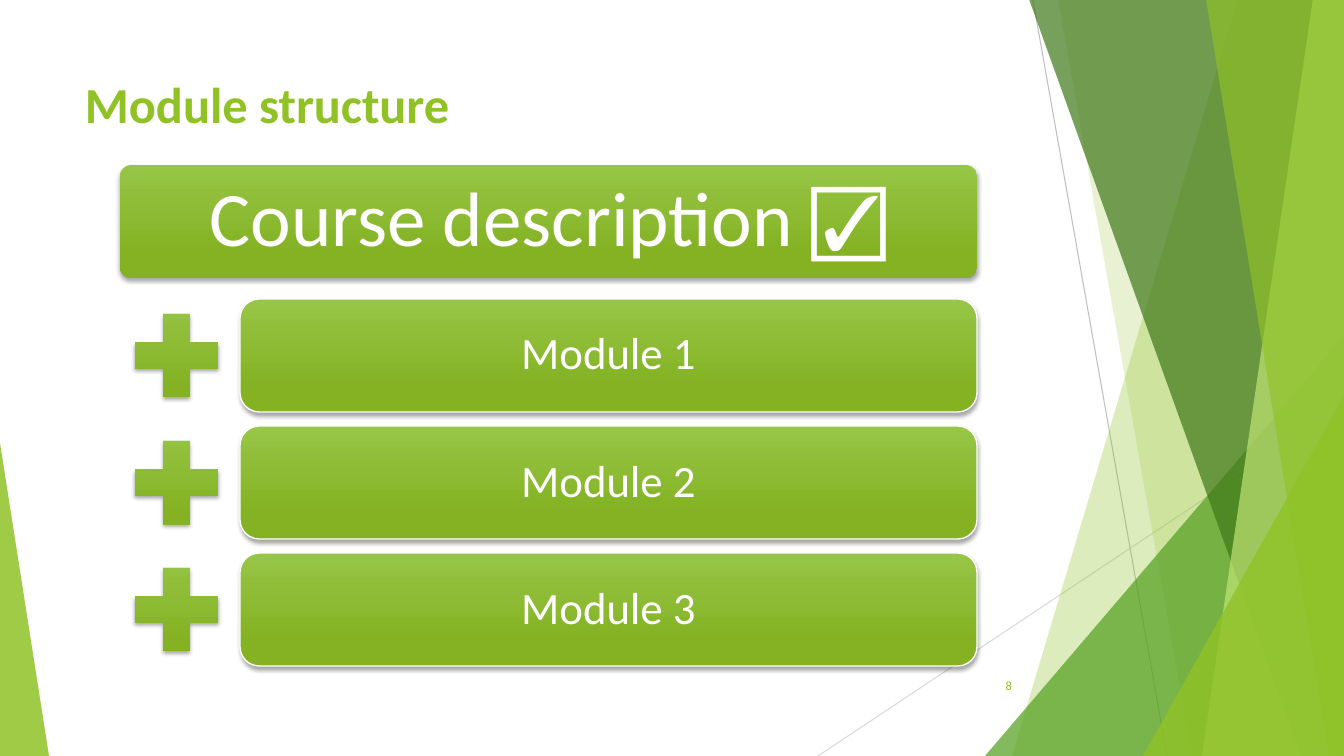
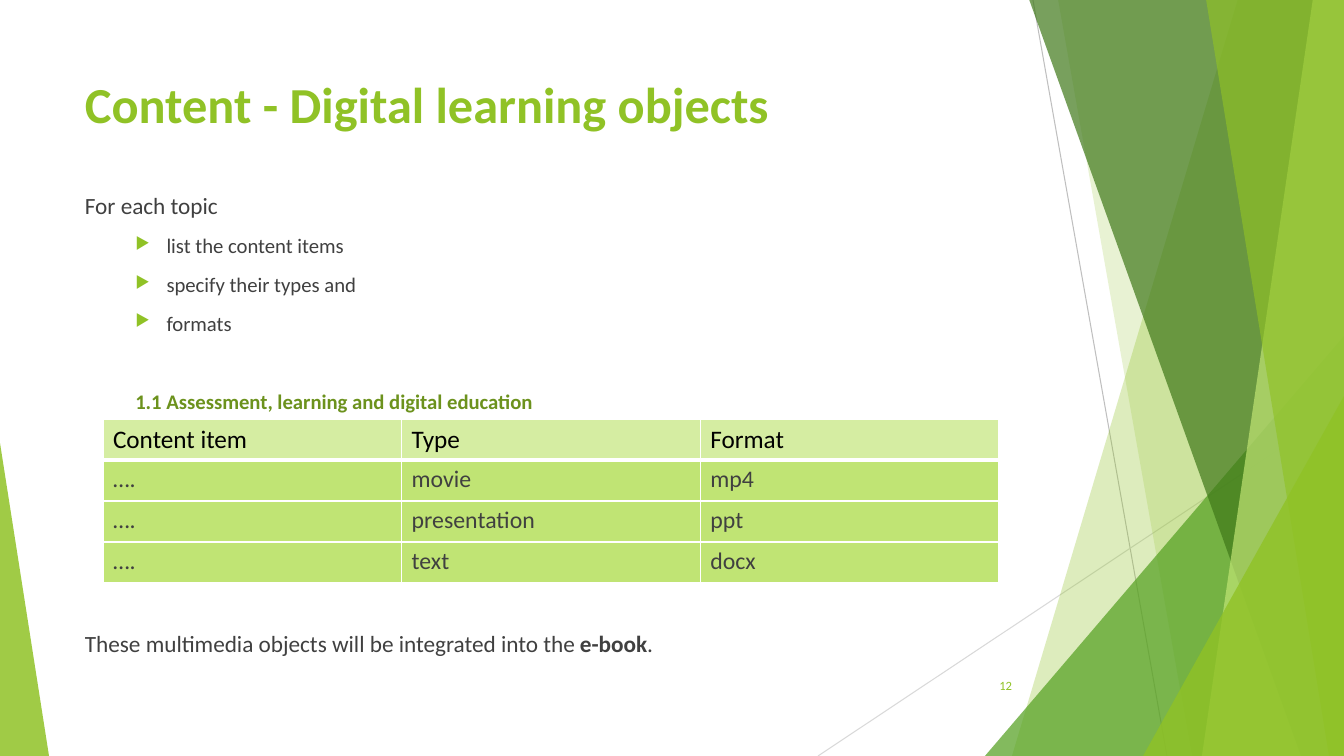
"""Builds two course-template slides on a shared green backdrop."""
from lxml import etree
from pptx import Presentation
from pptx import util as u
from pptx.dml.color import RGBColor
from pptx.enum import shapes, text
from pptx.oxml.ns import qn

PX = 914400 / 100.8
WIDE, HIGH = 1344, 756
FONT = "Calibri"
GREEN, DARK, WHITE = "90C226", "404040", "FFFFFF"
KIND = shapes.MSO_SHAPE
ALIGN = text.PP_ALIGN
MID = text.MSO_ANCHOR.MIDDLE

LINES = [((1033, 0, 1167, 756), "BFBFBF"), ((1344, 406, 818, 756), "D9D9D9")]
DECOR = [
    ("band", (1238, 1012), GREEN, 30),
    ("band", (1058, 1192), GREEN, 20),
    ("wedge", (985, 336, 359, 420, 1), "54A021", 72),
    ("band", (1029, 1301), "3F7819", 70),
    ("band", (1313, 1202), "C0E474", 70),
    ("band", (1206, 1329), GREEN, 65),
    ("wedge", (1143, 396, 201, 360, 1), GREEN, 80),
    ("wedge", (0, 443, 49, 313, 0), GREEN, 85),
]

COURSE = "Course description ☑"
MODULES = ["Module 1", "Module 2", "Module 3"]
INTRO = "For each topic"
STEPS = ["list the content items", "specify their types and", "formats"]
TOPIC = "1.1 Assessment, learning and digital education"
CLOSING = [("These multimedia objects will be integrated into the ", False),
           ("e-book", True), (".", False)]
ITEMS = [
    ("Content item", "Type", "Format"),
    ("….", "movie", "mp4"),
    ("….", "presentation", "ppt"),
    ("….", "text", "docx"),
]


def emu(*vals):
    return [u.Emu(round(v * PX)) for v in vals]


def rgb(code):
    return RGBColor.from_string(code)


def sub(node, tag, **attrs):
    return etree.SubElement(node, qn(tag), {k: str(v) for k, v in attrs.items()})


def style(para, size, color, bold=False, align=ALIGN.LEFT):
    font = para.font
    font.name, font.size, font.bold = FONT, u.Pt(size), bold
    font.color.rgb = rgb(color)
    para.alignment = align


def tint(shape, color, alpha):
    shape.shadow.inherit = False
    shape.line.fill.background()
    shape.fill.solid()
    shape.fill.fore_color.rgb = rgb(color)
    clr = shape.element.spPr.find(".//" + qn("a:srgbClr"))
    sub(clr, "a:alpha", val=alpha * 1000)


def band(slide, span, color, alpha):
    top, foot = span
    path = slide.shapes.build_freeform(top, -1, scale=PX)
    path.add_line_segments([(WIDE, -1), (WIDE, HIGH), (foot, HIGH)])
    tint(path.convert_to_shape(), color, alpha)


def wedge(slide, place, color, alpha):
    *box, apex = place
    shape = slide.shapes.add_shape(KIND.ISOSCELES_TRIANGLE, *emu(*box))
    shape.adjustments[0] = apex
    tint(shape, color, alpha)


def textbox(slide, box):
    frame = slide.shapes.add_textbox(*emu(*box)).text_frame
    frame.word_wrap = True
    return frame


def label(slide, box, words, size, color=GREEN, **look):
    frame = textbox(slide, box)
    para = frame.paragraphs[0]
    para.text = words
    style(para, size, color, **look)
    return frame


def start(deck, title, number):
    slide = deck.slides.add_slide(deck.slide_layouts[6])
    for ends, color in LINES:
        line = slide.shapes.add_connector(shapes.MSO_CONNECTOR.STRAIGHT, *emu(*ends))
        line.line.color.rgb = rgb(color)
        line.line.width = u.Pt(0.75)
        sub(line.element.spPr, "a:effectLst")
    draw = {"band": band, "wedge": wedge}
    for kind, place, color, alpha in DECOR:
        draw[kind](slide, place, color, alpha)
    label(slide, (75, 68, 948, 145), title, 36, bold=True)
    foot = label(slide, (946, 666, 76, 40), str(number), 9, align=ALIGN.RIGHT)
    foot.vertical_anchor = MID
    return slide


def glossy(slide, kind, box, words="", size=32, round_by=None, edge=False):
    shape = slide.shapes.add_shape(kind, *emu(*box))
    if round_by:
        shape.adjustments[0] = round_by
    shape.fill.gradient()
    shape.fill.gradient_angle = 270
    for stop, (color, spot) in zip(shape.fill.gradient_stops,
                                   [("97C547", 0), ("84B223", 0.78)]):
        stop.color.rgb, stop.position = rgb(color), spot
    if edge:
        shape.line.color.rgb = rgb(WHITE)
        shape.line.width = u.Pt(1)
    else:
        shape.line.fill.background()
    shape.shadow.inherit = False
    glow = sub(shape.element.spPr.find(qn("a:effectLst")), "a:outerShdw",
               blurRad=u.Pt(3), dist=u.Pt(2), dir=5400000, rotWithShape=0)
    sub(sub(glow, "a:srgbClr", val="000000"), "a:alpha", val=35000)
    if words:
        frame = shape.text_frame
        frame.word_wrap = True
        frame.vertical_anchor = MID
        para = frame.paragraphs[0]
        para.text, para.line_spacing = words, 0.9
        style(para, size, WHITE, align=ALIGN.CENTER)


def modules(deck):
    slide = start(deck, "Module structure", 8)
    left, side, inset = 120, 113, 120
    full = 857
    glossy(slide, KIND.ROUNDED_RECTANGLE, (left, 165, full, side), COURSE, 55, 0.1)
    for i, name in enumerate(MODULES):
        top = 299 + 127 * i
        glossy(slide, KIND.MATH_PLUS, (left, top, side, side))
        glossy(slide, KIND.ROUNDED_RECTANGLE, (left + inset, top, full - inset, side),
               name, round_by=0.17, edge=True)


def indent(para, left, hang=0):
    props = para._p.get_or_add_pPr()
    props.set("marL", str(u.Inches(left)))
    props.set("indent", str(u.Inches(-hang)))
    return props


def outline(slide):
    frame = label(slide, (75, 186, 948, 230), INTRO, 16.6, DARK)
    for words in STEPS:
        para = frame.add_paragraph()
        para.text, para.space_before = words, u.Pt(10)
        style(para, 14.8, DARK)
        props = indent(para, 0.81, 0.31)
        sub(sub(props, "a:buClr"), "a:srgbClr", val=GREEN)
        sub(props, "a:buSzPct", val=80000)
        sub(props, "a:buChar", char="▶")
        props.append(props.find(qn("a:defRPr")))
    para = frame.add_paragraph()
    para.text, para.space_before = TOPIC, u.Pt(38)
    style(para, 14.8, "6C921D", True)
    indent(para, 0.5)


def border(cell, row):
    props = cell._tc.get_or_add_tcPr()
    widths = {"L": 1, "R": 1, "T": 3 if row == 1 else 1, "B": 3 if row == 0 else 1}
    for i, (side, width) in enumerate(widths.items()):
        line = sub(props, "a:ln" + side, w=u.Pt(width))
        sub(sub(line, "a:solidFill"), "a:srgbClr", val=WHITE)
        props.insert(i, line)


def grid(slide):
    rows, cols = len(ITEMS), len(ITEMS[0])
    box = emu(103, 419, 896, 41 * rows)
    table = slide.shapes.add_table(rows, cols, *box).table
    table.first_row = table.horz_banding = False
    for r, items in enumerate(ITEMS):
        fill, size, color = ("C0E474", 17, DARK) if r else ("D5EDA2", 18, "000000")
        for c, words in enumerate(items):
            cell = table.cell(r, c)
            cell.text = words
            style(cell.text_frame.paragraphs[0], size, color)
            cell.fill.solid()
            cell.fill.fore_color.rgb = rgb(fill)
            border(cell, r)


def content(deck):
    slide = start(deck, "Content - Digital learning objects", 12)
    outline(slide)
    grid(slide)
    para = textbox(slide, (75, 624, 860, 38)).paragraphs[0]
    style(para, 16.6, DARK)
    for words, bold in CLOSING:
        run = para.add_run()
        run.text, run.font.bold = words, bold


def main():
    deck = Presentation()
    deck.slide_width, deck.slide_height = emu(WIDE, HIGH)
    modules(deck)
    content(deck)
    deck.save("out.pptx")


if __name__ == "__main__":
    main()
